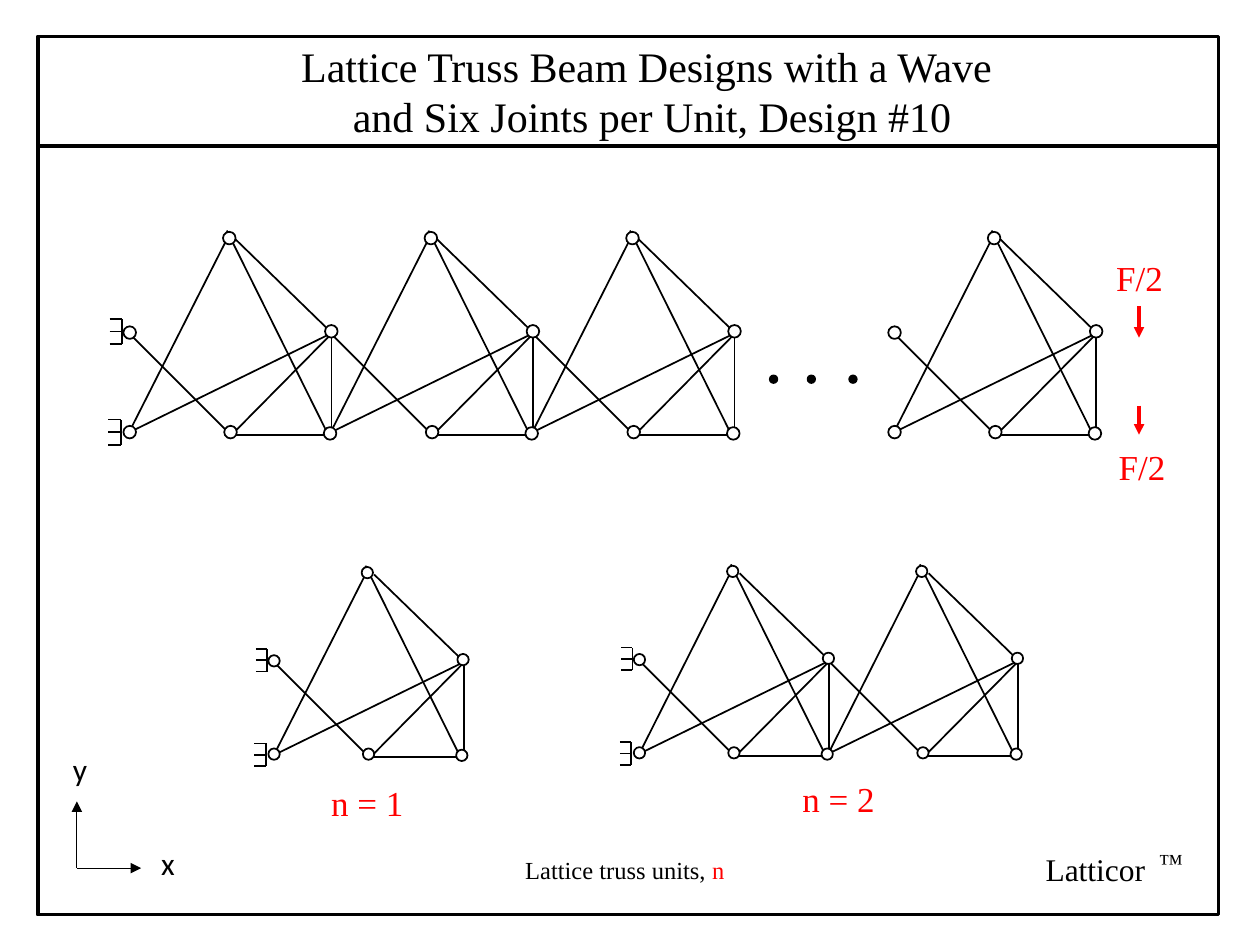
import pptx
import pptx.dml.color
import pptx.enum.shapes
import pptx.enum.text
import pptx.oxml.xmlchemy
import pptx.util

EMU_PER_PX = 9144
BLACK = pptx.dml.color.RGBColor(0x00, 0x00, 0x00)
WHITE = pptx.dml.color.RGBColor(0xFF, 0xFF, 0xFF)
RED = pptx.dml.color.RGBColor(0xFF, 0x00, 0x00)
SERIF = "Times New Roman"
SANS = "Calibri"

PITCH = 160
JOINT = 10
DOT = 6
LEFT_JOINTS = [(0, 0), (0, 79)]
UNIT_JOINTS = [(80, 79), (159, 80), (160, -1), (79, -75)]
UNIT_BARS = [
    (79, 81, 159, 81),
    (160, 80, 160, 0),
    (163, -2, 79, 83),
    (-2, -1, 78, 79),
    (84, -74, 158, -2),
    (159, 84, 77, -81),
    (0, 78, 76, -72),
    (159, 1, 2, 78),
]
SUPPORTS = [(-6, -1), (-7, 79)]
TOOTH = 10
SMALL = 15 / 16
TRUSSES = [
    {"left": 103, "top": 264, "units": 3, "scale": 1, "fixed": True},
    {"left": 710, "top": 264, "units": 1, "scale": 1, "fixed": False},
    {"left": 508, "top": 524, "units": 2, "scale": SMALL, "fixed": True},
    {"left": 218, "top": 525, "units": 1, "scale": SMALL, "fixed": True},
]
LABELS = [
    ((876, 199, 70, 44), [("F/2", RED)], 20),
    ((878, 349, 70, 44), [("F/2", RED)], 20),
    ((627, 612, 104, 44), [("n = 2", RED)], 20),
    ((253, 615, 88, 44), [("n = 1", RED)], 20),
    ((407, 674, 185, 34), [("Lattice truss units, ", BLACK), ("n", RED)], 14),
]
BRAND_LABELS = [
    ((820, 670, 109, 40), [("Latticor", BLACK)], 18),
    ((910, 667, 57, 34), [("™", BLACK)], 14),
]
AXES = [
    ((61, 689, 112, 689), (118, 665, 31, 40), "x"),
    ((61, 689, 61, 636), (48, 590, 31, 40), "y"),
]


def px(value):
    return pptx.util.Emu(round(value) * EMU_PER_PX)


def set_values(target, values):
    for name, value in values.items():
        setattr(target, name, value)


def format_line(line, color, width):
    line.color.rgb = color
    line.width = pptx.util.Pt(width)


def add_line(shapes, ends, color=BLACK, width=1, arrow=False):
    connector = shapes.add_connector(
        pptx.enum.shapes.MSO_CONNECTOR.STRAIGHT, *[px(value) for value in ends])
    format_line(connector.line, color, width)
    if arrow:
        tail = pptx.oxml.xmlchemy.OxmlElement("a:tailEnd")
        tail.set("type", "triangle")
        connector.line._get_or_add_ln().append(tail)
    connector._element.spPr.append(pptx.oxml.xmlchemy.OxmlElement("a:effectLst"))


def add_outline(shapes, kind, box, fill=None, width=1):
    shape = shapes.add_shape(kind, *[px(value) for value in box])
    shape.shadow.inherit = False
    if fill is None:
        shape.fill.background()
    else:
        shape.fill.solid()
        shape.fill.fore_color.rgb = fill
    format_line(shape.line, BLACK, width)


def add_circle(shapes, left, top, size, fill):
    add_outline(shapes, pptx.enum.shapes.MSO_SHAPE.OVAL,
                (left, top, size, size), fill)


def write_run(paragraph, text, size, color, font):
    run = paragraph.add_run()
    run.text = text
    set_values(run.font, {"name": font, "size": pptx.util.Pt(size)})
    run.font.color.rgb = color


def add_label(shapes, box, runs, size, font=SERIF):
    frame = shapes.add_textbox(*[px(value) for value in box]).text_frame
    frame.word_wrap = True
    for text, color in runs:
        write_run(frame.paragraphs[0], text, size, color, font)


def write_title(title):
    box = {"left": 229, "top": 27, "width": 588, "height": 91}
    set_values(title, {name: px(value) for name, value in box.items()})
    frame = title.text_frame
    set_values(frame, {
        "word_wrap": True,
        "auto_size": pptx.enum.text.MSO_AUTO_SIZE.NONE,
        "vertical_anchor": pptx.enum.text.MSO_ANCHOR.TOP,
    })
    lines = [("Lattice Truss Beam Designs with a Wave", 0),
             ("and Six Joints per Unit, Design #10", 41)]
    for index, (text, indent) in enumerate(lines):
        paragraph = frame.add_paragraph() if index else frame.paragraphs[0]
        set_values(paragraph, {
            "alignment": pptx.enum.text.PP_ALIGN.LEFT, "line_spacing": 1.0})
        paragraph._p.get_or_add_pPr().set("marL", str(int(px(indent))))
        write_run(paragraph, text, 24, BLACK, SERIF)


def add_support(shapes, x, y, tooth):
    add_line(shapes, (x, y + tooth, x, y - tooth))
    for step in (-tooth, 0, tooth):
        add_line(shapes, (x - tooth, y + step, x, y + step))


def add_truss(shapes, left, top, units, scale, fixed):
    def place(x, y, unit=0):
        return left + scale * (x + unit * PITCH), top + scale * y

    for unit in range(units):
        for x1, y1, x2, y2 in UNIT_BARS:
            add_line(shapes, place(x1, y1, unit) + place(x2, y2, unit))
    if fixed:
        for support in SUPPORTS:
            add_support(shapes, *place(*support), TOOTH * scale)
    joints = [place(*joint) for joint in LEFT_JOINTS]
    joints += [place(*joint, unit) for unit in range(units) for joint in UNIT_JOINTS]
    size = JOINT * scale
    for x, y in joints:
        add_circle(shapes, x - size / 2, y - size / 2, size, WHITE)


def add_axes(shapes):
    group = shapes.add_group_shape()
    for ends, box, name in AXES:
        add_line(group.shapes, ends, width=0.5, arrow=True)
        add_label(group.shapes, box, [(name, BLACK)], 18, SANS)


def main():
    presentation = pptx.Presentation()
    set_values(presentation, {"slide_width": px(1000), "slide_height": px(750)})
    slide = presentation.slides.add_slide(presentation.slide_layouts[5])
    shapes = slide.shapes
    write_title(shapes.title)
    add_outline(shapes, pptx.enum.shapes.MSO_SHAPE.RECTANGLE,
                (30, 29, 937, 697), width=2)
    add_line(shapes, (30, 116, 967, 116), width=2)
    for truss in TRUSSES:
        add_truss(shapes, **truss)
    for left in (611, 641, 674):
        add_circle(shapes, left, 298, DOT, BLACK)
    for top, bottom in ((243, 268), (322, 345)):
        add_line(shapes, (904, top, 904, bottom), RED, 2, arrow=True)
    for label in LABELS:
        add_label(shapes, *label)
    add_axes(shapes)
    brand = shapes.add_group_shape()
    for label in BRAND_LABELS:
        add_label(brand.shapes, *label)
    presentation.save("out.pptx")


if __name__ == "__main__":
    main()
